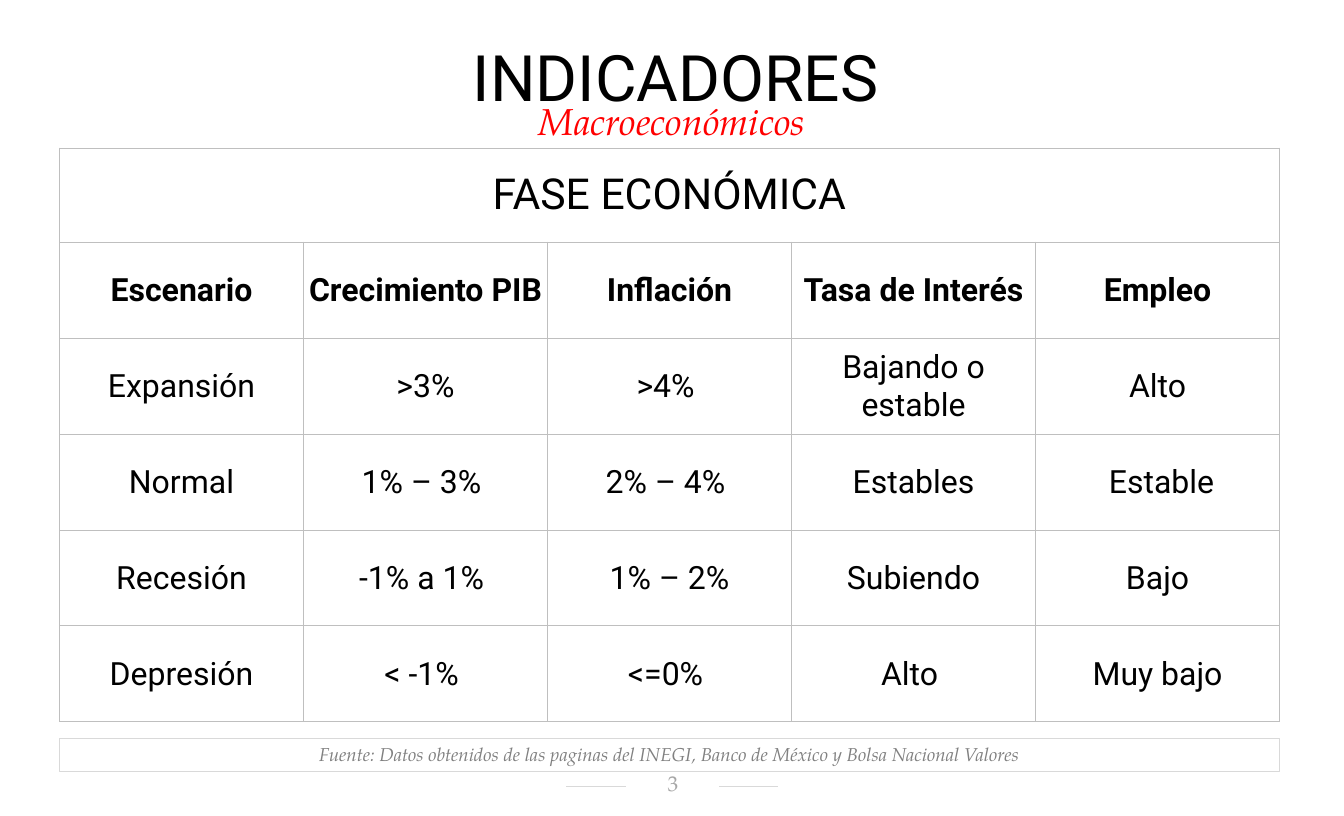
from dataclasses import dataclass

from lxml.etree import SubElement
from pptx import Presentation
from pptx.dml.color import RGBColor as Rgb
from pptx.enum.shapes import MSO_CONNECTOR as Connector
from pptx.enum.shapes import MSO_SHAPE as Shape
from pptx.enum.text import MSO_ANCHOR as Anchor
from pptx.enum.text import PP_ALIGN as Align
from pptx.oxml.ns import qn
from pptx.util import Inches, Pt


@dataclass(frozen=True)
class Theme:
    sans: str = "Roboto"
    serif: str = "TeX Gyre Pagella"
    black: str = "000000"
    red: str = "FF0000"
    source: str = "808080"
    number: str = "A6A6A6"
    rule: str = "D9D9D9"
    border: str = "BFBFBF"
    title_size: int = 48
    heading_size: int = 32
    subtitle_size: int = 28
    cell_size: int = 24
    number_size: int = 16
    source_size: int = 14


class PageBuilder:
    def __init__(self, deck, theme):
        self.theme = theme
        self.width, self.height = deck.slide_width, deck.slide_height
        self.page = deck.slides.add_slide(deck.slide_layouts[6])

    def x(self, percent):
        return round(self.width * percent / 100)

    def y(self, percent):
        return round(self.height * percent / 100)

    def area(self, left, top, width, height):
        return self.x(left), self.y(top), self.x(width), self.y(height)

    def set_text(self, frame, text, size, color, font, italic=False, bold=False):
        frame.word_wrap = True
        para = frame.paragraphs[0]
        para.text = text
        para.alignment = Align.CENTER
        para.font.name = font
        para.font.size = Pt(size)
        para.font.color.rgb = Rgb.from_string(color)
        para.font.italic = italic
        para.font.bold = bold
        return para

    def text(self, area, *style, margins=(0.1, 0.05, 0.1, 0.05), anchor=Anchor.TOP, **emphasis):
        frame = self.page.shapes.add_textbox(*self.area(*area)).text_frame
        frame.margin_left, frame.margin_top, frame.margin_right, frame.margin_bottom = map(Inches, margins)
        frame.vertical_anchor = anchor
        return self.set_text(frame, *style, **emphasis)

    def framed_text(self, area, *style, **emphasis):
        box = self.page.shapes.add_shape(Shape.RECTANGLE, *self.area(*area))
        box.shadow.inherit = False
        box.fill.background()
        box.line.color.rgb = Rgb.from_string(self.theme.rule)
        box.line.width = Pt(0.75)
        box.text_frame.vertical_anchor = Anchor.TOP
        self.set_text(box.text_frame, *style, **emphasis)

    def rule(self, start, end, level):
        line = self.page.shapes.add_connector(
            Connector.STRAIGHT, self.x(start), self.y(level), self.x(end), self.y(level))
        line.line.color.rgb = Rgb.from_string(self.theme.rule)
        line.line.width = Pt(0.5)
        SubElement(line._element.spPr, qn("a:effectLst"))

    def border(self, cell):
        properties = cell._tc.get_or_add_tcPr()
        for side in ("a:lnL", "a:lnR", "a:lnT", "a:lnB"):
            edge = SubElement(properties, qn(side), w=str(Pt(0.5)))
            fill = SubElement(edge, qn("a:solidFill"))
            SubElement(fill, qn("a:srgbClr"), val=self.theme.border)

    def table(self, area, heading, rows, heading_height):
        theme = self.theme
        count = len(rows[0])
        left, top, width, height = area
        table = self.page.shapes.add_table(len(rows) + 1, count, *self.area(*area)).table
        table.first_row = table.horz_banding = False
        for column in table.columns:
            column.width = self.x(width / count)
        for row in table.rows:
            row.height = self.y((height - heading_height) / len(rows))
        table.rows[0].height = self.y(heading_height)
        for cell in table.iter_cells():
            self.border(cell)
            cell.fill.background()
            cell.vertical_anchor = Anchor.MIDDLE
            cell.margin_left = cell.margin_top = cell.margin_right = Inches(0.01)
            cell.margin_bottom = 0
        title = table.cell(0, 0)
        title.merge(table.cell(0, count - 1))
        title.margin_top = title.margin_bottom = Inches(0.03)
        self.set_text(title.text_frame, heading, theme.heading_size, theme.black, theme.sans)
        for index, row in enumerate(rows, 1):
            for column, text in enumerate(row):
                self.set_text(table.cell(index, column).text_frame, text, theme.cell_size,
                              theme.black, theme.sans, bold=index == 1)


PHASES = [
    ["Escenario", "Crecimiento PIB", "Inflación", "Tasa de Interés", "Empleo"],
    ["Expansión", ">3%", ">4% ", "Bajando o estable", "Alto"],
    ["Normal", "1% – 3% ", "2% – 4% ", "Estables", " Estable"],
    ["Recesión", "-1% a 1% ", "1% – 2%", "Subiendo", "Bajo"],
    ["Depresión", "< -1% ", "<=0% ", "Alto ", "Muy bajo"],
]
SOURCE = "Fuente: Datos obtenidos de las paginas del INEGI, Banco de México y Bolsa Nacional Valores"


def main():
    deck = Presentation()
    deck.slide_width, deck.slide_height = Inches(14), Inches(8.5)
    theme = Theme()
    builder = PageBuilder(deck, theme)
    for start, end in ((42.14, 46.57), (53.5, 57.86)):
        builder.rule(start, end, 96.35)
    builder.text((46.5, 94.59, 7, 3.06), "3", theme.number_size, theme.number, theme.serif,
                 margins=(0.12, 0.02, 0.1, 0.05), anchor=Anchor.MIDDLE)
    title = builder.text((0.43, 6.35, 99.71, 8.24), "INDICADORES", theme.title_size,
                         theme.black, theme.sans, margins=(0.13, 0.07, 0.13, 0.07))
    title.line_spacing = 0.7
    subtitle = builder.text((0.36, 11.41, 100, 6.71), "Macroeconómicos ", theme.subtitle_size,
                            theme.red, theme.serif, italic=True)
    subtitle.space_after = Pt(4)
    builder.framed_text((4.43, 90.47, 90.79, 4.12), SOURCE, theme.source_size,
                        theme.source, theme.serif, italic=True)
    builder.table((4.43, 18.12, 90.79, 70.35), "FASE ECONÓMICA", PHASES, 11.53)
    deck.save("out.pptx")


if __name__ == "__main__":
    main()
